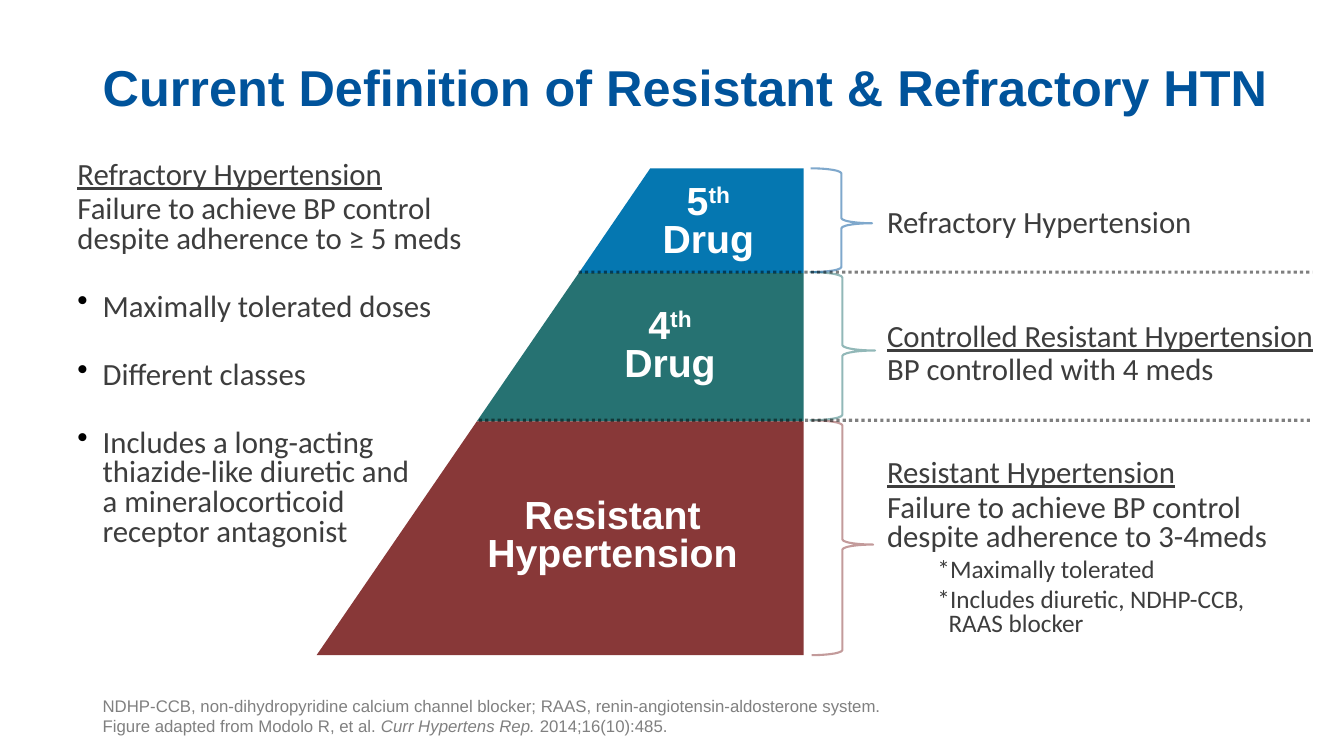
import pptx
import pptx.util
import pptx.dml.color
import pptx.enum.dml
import pptx.enum.shapes
import pptx.enum.text
import pptx.oxml.ns
from lxml import etree

RGB = pptx.dml.color.RGBColor
NAVY = RGB(0x00, 0x53, 0x9B)
BLUE = RGB(0x05, 0x77, 0xB1)
TEAL = RGB(0x26, 0x72, 0x72)
RED = RGB(0x88, 0x38, 0x38)
INK = RGB(0x3D, 0x3D, 0x3D)
GRAY = RGB(0x80, 0x80, 0x80)
WHITE = RGB(0xFF, 0xFF, 0xFF)
BLACK = RGB(0x00, 0x00, 0x00)
SCALE = 9144

Pt = pptx.util.Pt
ALIGN = pptx.enum.text.PP_ALIGN
ANCHOR = pptx.enum.text.MSO_ANCHOR
qn = pptx.oxml.ns.qn


def px(n):
    """Turn px into EMU."""
    return pptx.util.Emu(n * SCALE)


def frame(slide, box, anchor=ANCHOR.TOP):
    """Add a wrapping text box and return its text frame."""
    text = slide.shapes.add_textbox(*map(px, box)).text_frame
    text.word_wrap = True
    text.vertical_anchor = anchor
    return text


def fill(text, lines):
    """Put one paragraph per line into a frame and return them."""
    paras = [text.paragraphs[0]] + [text.add_paragraph() for _ in lines[1:]]
    for para, line in zip(paras, lines):
        para.text = line
    return paras


def style(para, name, size, color, bold=False):
    """Set the font of every run in a paragraph."""
    for run in para.runs:
        font = run.font
        font.name, font.size, font.bold = name, Pt(size), bold
        font.color.rgb = color


def indent(para, left, first):
    """Set the left margin and first line indent of a paragraph."""
    props = para._p.get_or_add_pPr()
    props.set("marL", str(px(left)))
    props.set("indent", str(px(first)))
    return props


def bullet(para):
    """Give a paragraph a black hanging bullet."""
    props = indent(para, 25, -25)
    color = etree.SubElement(props, qn("a:buClr"))
    etree.SubElement(color, qn("a:srgbClr"), val=str(BLACK))
    etree.SubElement(props, qn("a:buChar"), char="•")


def stroke(line, color, width):
    """Draw a half transparent line."""
    line.color.rgb = color
    line.width = Pt(width)
    tone = line._get_or_add_ln().find(".//" + qn("a:srgbClr"))
    etree.SubElement(tone, qn("a:alpha"), val="50000")


def title(slide, box):
    """Place the slide title."""
    para = fill(frame(slide, box, ANCHOR.BOTTOM),
                ["Current Definition of Resistant & Refractory HTN"])[0]
    para.line_spacing = 0.9
    style(para, "Arial", 36, NAVY, True)


def prose(slide, box, lines, gap):
    """Place tight body text under an optional underlined heading."""
    paras = fill(frame(slide, box), lines)
    for i, para in enumerate(paras):
        para.line_spacing = 0.8
        para.space_before = Pt(gap if i else 0)
        style(para, "Calibri", 22, INK)
    if len(paras) > 1:
        paras[0].runs[0].font.underline = True
    return paras


def criteria(slide, box):
    """Place the refractory criteria with their bullets."""
    paras = prose(slide, box, [
        "Refractory Hypertension",
        "Failure to achieve BP control despite adherence to ≥ 5 meds",
        "Maximally tolerated doses",
        "Different classes",
        "Includes a long-acting\nthiazide-like diuretic and\n"
        "a mineralocorticoid\nreceptor antagonist"], 3)
    for para in paras[2:]:
        bullet(para)
        para.space_before = Pt(27.5)


def label(slide, box, lines):
    """Place a white tier label, raising an ordinal ending."""
    text = frame(slide, box)
    text.margin_left = text.margin_right = text.margin_bottom = 0
    text.margin_top = px(8)
    for para in fill(text, lines):
        if para.text.endswith("th"):
            para.text = para.text[:-2]
            end = para.add_run()
            end.text = "th"
            end._r.get_or_add_rPr().set("baseline", "30000")
        para.alignment = ALIGN.CENTER
        para.line_spacing = Pt(27)
        style(para, "Arial", 28, WHITE, True)


def pyramid(slide, box):
    """Draw the half pyramid of drug tiers with their labels."""
    x, y, wide, high = box
    tiers = [
        (0, 104, BLUE, (301, 9, 175, 132), ["5th", "Drug"]),
        (104, 251, TEAL, (271, 132, 159, 108), ["4th", "Drug"]),
        (251, high, RED, (147, 321, 293, 132), ["Resistant", "Hypertension"]),
    ]
    for top, end, color, spot, lines in tiers:
        left, low = (round(x + 331 * (1 - d / high)) for d in (top, end))
        path = slide.shapes.build_freeform(left, y + top, SCALE)
        path.add_line_segments([(x + wide, y + top), (x + wide, y + end),
                                (low, y + end)])
        tier = path.convert_to_shape()
        tier.shadow.inherit = False
        tier.fill.solid()
        tier.fill.fore_color.rgb = color
        tier.line.fill.background()
        label(slide, (x + spot[0], y + spot[1], *spot[2:]), lines)


def brace(slide, box, color):
    """Draw a right brace beside a tier."""
    kind = pptx.enum.shapes.MSO_SHAPE.RIGHT_BRACE
    shape = slide.shapes.add_shape(kind, *map(px, box))
    shape.adjustments[0], shape.adjustments[1] = 0.083, 0.529
    shape.shadow.inherit = False
    shape.fill.background()
    stroke(shape.line, color, 1.5)


def rule(slide, left, right, y):
    """Draw a dotted divider between tiers."""
    kind = pptx.enum.shapes.MSO_CONNECTOR.STRAIGHT
    line = slide.shapes.add_connector(kind, px(left), px(y), px(right), px(y))
    stroke(line.line, BLACK, 2.25)
    line.line.dash_style = pptx.enum.dml.MSO_LINE.ROUND_DOT
    etree.SubElement(line._element.spPr, qn("a:effectLst"))


def groups(slide, box):
    """Place braces, dividers and the text for each tier."""
    x, y, wide, high = box
    brace(slide, (x + 2, y + 250, 61, 233), RED)
    brace(slide, (x, y + 103, 65, 147), TEAL)
    brace(slide, (x + 1, y, 61, 103), NAVY)
    for left, drop in ((574, 103), (475, 250)):
        rule(slide, left, x + wide, y + drop)
    prose(slide, (x + 67, y + 36, 447, 46), ["Refractory Hypertension"], 3)
    prose(slide, (x + 67, y + 149, 447, 78),
          ["Controlled Resistant Hypertension", "BP controlled with 4 meds"], 3)
    paras = prose(slide, (x + 67, y + 284, 447, 206), [
        "Resistant Hypertension",
        "Failure to achieve BP control despite adherence to 3-4meds",
        "*Maximally tolerated",
        "*Includes diuretic, NDHP-CCB,\nRAAS blocker"], 4)
    for para in paras[2:]:
        para.level = 1
        indent(para, 61, -11)
        style(para, "Calibri", 18, INK)


def source(slide, box):
    """Place the abbreviations and the citation."""
    paras = fill(frame(slide, box, ANCHOR.BOTTOM), [
        "NDHP-CCB, non-dihydropyridine calcium channel blocker; "
        "RAAS, renin-angiotensin-aldosterone system.",
        "Figure adapted from Modolo R, et al. "])
    for part in ("Curr Hypertens Rep. ", "2014;16(10):485."):
        paras[1].add_run().text = part
    for para in paras:
        style(para, "Arial", 12, GRAY)
    paras[1].runs[1].font.italic = True


def main():
    """Build and save the slide."""
    deck = pptx.Presentation()
    deck.slide_width, deck.slide_height = px(1333), px(750)
    slide = deck.slides.add_slide(deck.slide_layouts[6])
    pyramid(slide, (314, 167, 483, 483))
    groups(slide, (803, 167, 499, 483))
    criteria(slide, (67, 156, 447, 535))
    title(slide, (92, 0, 1188, 121))
    source(slide, (92, 695, 973, 40))
    deck.save("out.pptx")


if __name__ == "__main__":
    main()
